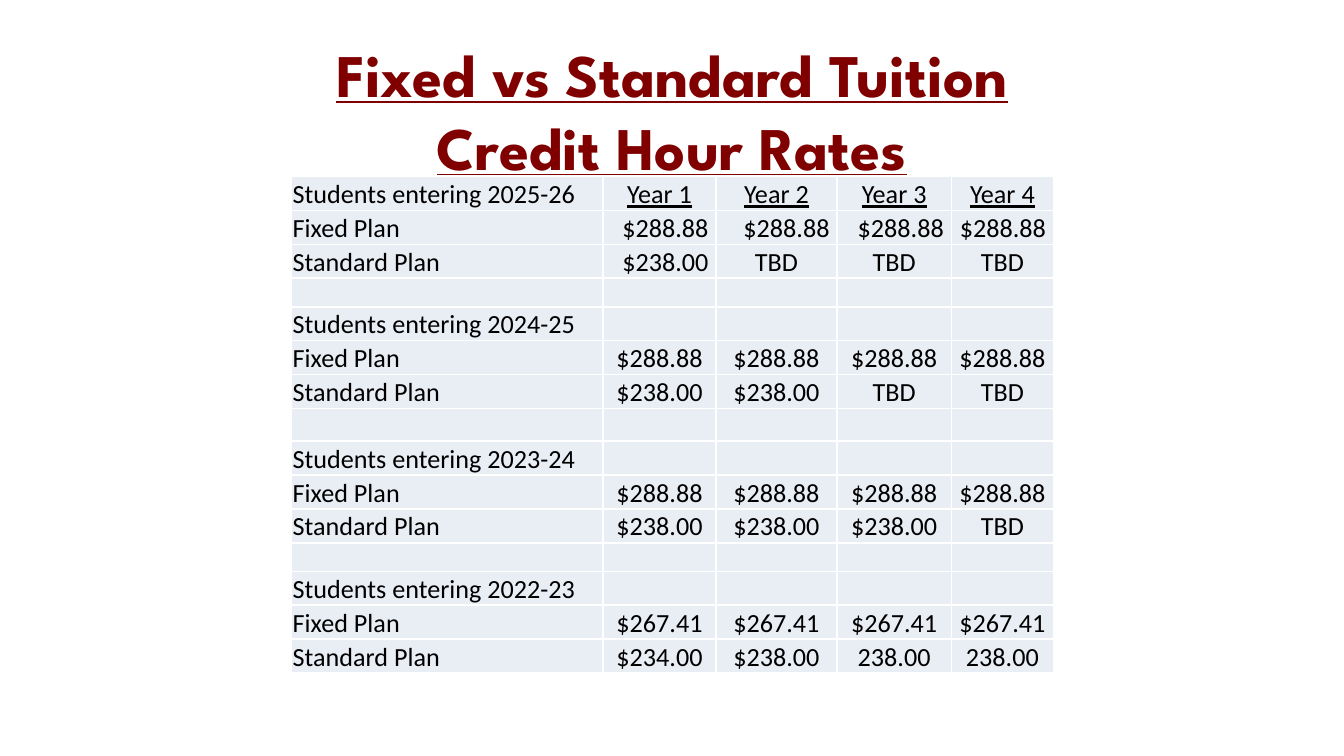
from dataclasses import dataclass

from lxml import etree
from pptx import Presentation
from pptx.dml.color import RGBColor
from pptx.enum.text import MSO_ANCHOR, MSO_AUTO_SIZE, PP_ALIGN
from pptx.oxml.ns import qn
from pptx.slide import Slide
from pptx.table import Table, _Cell
from pptx.util import Cm, Pt

LEFT, CENTER, RIGHT = PP_ALIGN.LEFT, PP_ALIGN.CENTER, PP_ALIGN.RIGHT
TOP, BOTTOM = MSO_ANCHOR.TOP, MSO_ANCHOR.BOTTOM
NO_AUTOFIT = MSO_AUTO_SIZE.NONE


@dataclass(frozen=True)
class Theme:
    title_font: str = "League Spartan"
    body_font: str = "Calibri"
    title_size: float = 32.4
    body_size: float = 14
    empty_size: float = 10
    title_color: str = "800000"
    text_color: str = "000000"
    cell_color: str = "E9EDF4"
    border_color: str = "FFFFFF"
    border_width: float = 1


@dataclass(frozen=True)
class Cohort:
    years: str
    fixed: tuple[str, ...]
    standard: tuple[str, ...]
    gap_height: float = 0


THEME = Theme()
YEARS = ("Year 1", "Year 2", "Year 3", "Year 4")
COLUMN_WIDTHS = (5.89, 2.13, 2.29, 2.16, 1.93)
ROW_HEIGHT = 0.64
COHORTS = (
    Cohort("2025-26", ("$288.88",) * 4, ("$238.00", "TBD", "TBD", "TBD"), 0.54),
    Cohort("2024-25", ("$288.88",) * 4, ("$238.00", "$238.00", "TBD", "TBD"), 0.62),
    Cohort("2023-24", ("$288.88",) * 4, ("$238.00", "$238.00", "$238.00", "TBD"), 0.54),
    Cohort("2022-23", ("$267.41",) * 4, ("$234.00", "$238.00", "238.00", "238.00")),
)


def add_title(slide: Slide, text: str) -> None:
    title = slide.shapes.title
    title.left, title.top, title.width, title.height = Cm(1.27), Cm(0.58), Cm(22.86), Cm(2.39)
    frame = title.text_frame
    frame.text = text
    frame.word_wrap = True
    frame.auto_size = NO_AUTOFIT
    frame.vertical_anchor = TOP
    paragraph = frame.paragraphs[0]
    paragraph.alignment = CENTER
    for run in paragraph.runs:
        run.font.name = THEME.title_font
        run.font.size = Pt(THEME.title_size)
        run.font.bold = True
        run.font.underline = True
        run.font.color.rgb = RGBColor.from_string(THEME.title_color)


def add_borders(cell: _Cell) -> None:
    properties = cell._tc.get_or_add_tcPr()
    for index, side in enumerate(("lnL", "lnR", "lnT", "lnB")):
        line = etree.Element(qn(f"a:{side}"), w=str(Pt(THEME.border_width)))
        fill = etree.SubElement(line, qn("a:solidFill"))
        etree.SubElement(fill, qn("a:srgbClr"), val=THEME.border_color)
        properties.insert(index, line)


def format_cell(cell: _Cell, text: str, alignment: PP_ALIGN, underline: bool) -> None:
    cell.fill.solid()
    cell.fill.fore_color.rgb = RGBColor.from_string(THEME.cell_color)
    add_borders(cell)
    cell.vertical_anchor = BOTTOM
    cell.margin_left = cell.margin_top = Cm(0.02)
    cell.margin_right = Cm(0.14) if alignment == RIGHT else Cm(0.02)
    cell.margin_bottom = Cm(0)
    cell.text_frame.text = text
    paragraph = cell.text_frame.paragraphs[0]
    paragraph.alignment = alignment
    if not text:
        etree.SubElement(paragraph._p, qn("a:endParaRPr"), sz=str(THEME.empty_size * 100))
    for run in paragraph.runs:
        run.font.name = THEME.body_font
        run.font.size = Pt(THEME.body_size)
        run.font.underline = underline
        run.font.color.rgb = RGBColor.from_string(THEME.text_color)


def fill_row(table: Table, row: int, height: float, texts: tuple[str, ...]) -> None:
    table.rows[row].height = Cm(height)
    for column, text in enumerate(texts):
        alignment = LEFT if column == 0 else CENTER
        if row in (1, 2) and text.startswith("$"):
            alignment = RIGHT
        format_cell(table.cell(row, column), text, alignment, text in YEARS)


def add_rates(slide: Slide) -> None:
    blanks = ("",) * len(YEARS)
    rows = []
    for index, cohort in enumerate(COHORTS):
        headings = YEARS if index == 0 else blanks
        rows.append((ROW_HEIGHT, (f"Students entering {cohort.years}", *headings)))
        rows.append((ROW_HEIGHT, ("Fixed Plan", *cohort.fixed)))
        rows.append((ROW_HEIGHT, ("Standard Plan", *cohort.standard)))
        if cohort.gap_height:
            rows.append((cohort.gap_height, ("", *blanks)))
    width, height = sum(COLUMN_WIDTHS), sum(row[0] for row in rows)
    frame = slide.shapes.add_table(
        len(rows), len(COLUMN_WIDTHS), Cm(5.51), Cm(3.34), Cm(width), Cm(height)
    )
    table = frame.table
    table.first_row = False
    table.horz_banding = False
    for column, column_width in zip(table.columns, COLUMN_WIDTHS):
        column.width = Cm(column_width)
    for index, (row_height, texts) in enumerate(rows):
        fill_row(table, index, row_height, texts)


def main() -> None:
    presentation = Presentation()
    presentation.slide_width, presentation.slide_height = Cm(25.4), Cm(14.29)
    slide = presentation.slides.add_slide(presentation.slide_layouts[5])
    add_title(slide, "Fixed vs Standard Tuition\vCredit Hour Rates")
    add_rates(slide)
    presentation.save("out.pptx")


if __name__ == "__main__":
    main()
